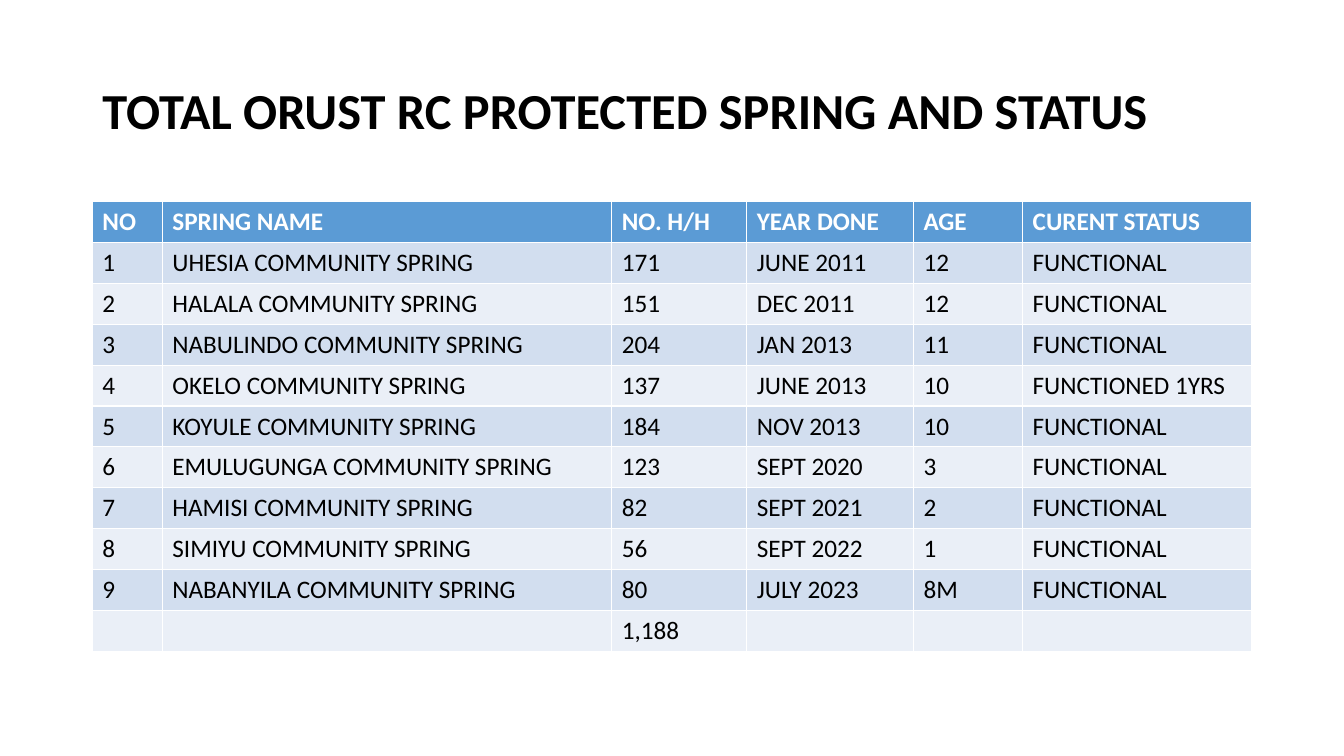
from pptx import Presentation
from pptx.dml.color import RGBColor
from pptx.enum.text import MSO_ANCHOR, PP_ALIGN
from pptx.util import Pt

BLACK = RGBColor(0x00, 0x00, 0x00)
WHITE = RGBColor(0xFF, 0xFF, 0xFF)
HEADER_BLUE = RGBColor(0x5B, 0x9B, 0xD5)
BANDS = [RGBColor(0xEA, 0xEF, 0xF7), RGBColor(0xD2, 0xDE, 0xEF)]

LEFT, WIDTH = Pt(66), Pt(828)
ROW_HEIGHT = Pt(29.2)
COLUMN_WIDTHS = [50, 321, 96.5, 119, 78, 163.5]

HEADINGS = ["NO", "SPRING NAME", "NO. H/H", "YEAR DONE", "AGE", "CURENT STATUS"]
SPRINGS = [
    ("UHESIA", "171", "JUNE 2011", "12", "FUNCTIONAL"),
    ("HALALA", "151", "DEC 2011", "12", "FUNCTIONAL"),
    ("NABULINDO", "204", "JAN 2013", "11", "FUNCTIONAL"),
    ("OKELO", "137", "JUNE 2013", "10", "FUNCTIONED 1YRS"),
    ("KOYULE", "184", "NOV 2013", "10", "FUNCTIONAL"),
    ("EMULUGUNGA", "123", "SEPT 2020", "3", "FUNCTIONAL"),
    ("HAMISI", "82", "SEPT 2021", "2", "FUNCTIONAL"),
    ("SIMIYU", "56", "SEPT 2022", "1", "FUNCTIONAL"),
    ("NABANYILA", "80", "JULY 2023", "8M", "FUNCTIONAL"),
]
TOTALS = ["", "", "1,188", "", "", ""]

rows = [HEADINGS]
for number, (name, *details) in enumerate(SPRINGS, start=1):
    rows.append([str(number), f"{name} COMMUNITY SPRING", *details])
rows.append(TOTALS)

presentation = Presentation()
presentation.slide_width = Pt(960)
presentation.slide_height = Pt(540)
slide = presentation.slides.add_slide(presentation.slide_layouts[5])

title = slide.shapes.title
title.left, title.top, title.width, title.height = LEFT, Pt(28.75), WIDTH, Pt(104.4)
title.text_frame.text = "TOTAL ORUST RC PROTECTED SPRING AND STATUS"
title.text_frame.vertical_anchor = MSO_ANCHOR.MIDDLE
heading = title.text_frame.paragraphs[0]
heading.alignment = PP_ALIGN.LEFT
heading.line_spacing = 0.9
heading.font.name = "Calibri"
heading.font.size = Pt(36)
heading.font.bold = True
heading.font.color.rgb = BLACK

springs = slide.shapes.add_table(
    len(rows), len(HEADINGS), LEFT, Pt(144), WIDTH, ROW_HEIGHT * len(rows)
).table
for column, width in zip(springs.columns, COLUMN_WIDTHS):
    column.width = Pt(width)

for row_index, row in enumerate(rows):
    springs.rows[row_index].height = ROW_HEIGHT
    is_header = row_index == 0
    for column_index, wording in enumerate(row):
        cell = springs.cell(row_index, column_index)
        cell.fill.solid()
        cell.fill.fore_color.rgb = HEADER_BLUE if is_header else BANDS[row_index % 2]
        if wording:
            cell.text = wording
            entry = cell.text_frame.paragraphs[0]
            entry.font.name = "Calibri"
            entry.font.size = Pt(18)
            entry.font.bold = is_header
            entry.font.color.rgb = WHITE if is_header else BLACK

presentation.save("out.pptx")
